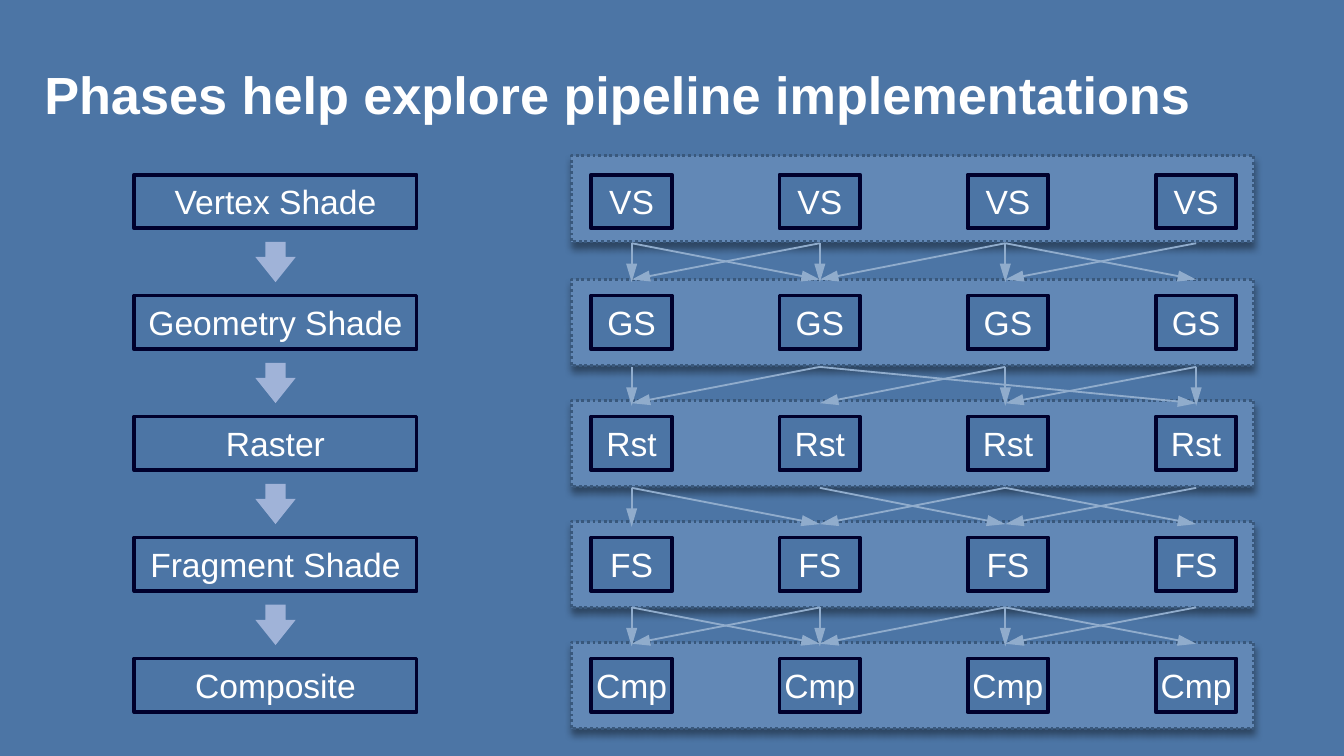
"""Build a slide on pipeline phases and their parallel implementation."""
import pptx
import pptx.dml.color
import pptx.enum.dml
import pptx.enum.shapes
import pptx.enum.text
import pptx.oxml
import pptx.oxml.ns
import pptx.util

Inches = pptx.util.Inches
RGBColor = pptx.dml.color.RGBColor
SHAPES = pptx.enum.shapes.MSO_SHAPE
ALIGN = pptx.enum.text.PP_ALIGN
MIDDLE = pptx.enum.text.MSO_ANCHOR.MIDDLE

BLUE = RGBColor(0x4C, 0x75, 0xA5)
NAVY = RGBColor(0x00, 0x00, 0x2C)
WHITE = RGBColor(0xFF, 0xFF, 0xFF)
ARROW = RGBColor(0xA0, 0xB3, 0xD8)
BAND = RGBColor(0x62, 0x88, 0xB6)
BAND_EDGE = RGBColor(0x39, 0x58, 0x7C)
LINK = RGBColor(0x90, 0xAC, 0xCC)

STAGES = [
    ("Vertex Shade", "VS"),
    ("Geometry Shade", "GS"),
    ("Raster", "Rst"),
    ("Fragment Shade", "FS"),
    ("Composite", "Cmp"),
]
ROW_TOP, ROW_STEP = 1.3, 0.9
LANE_LEFT, LANE_STEP, LANES = 4.4, 1.4, 4
BAND_TOPS = [1.16, 2.08, 2.98, 3.88, 4.78]
LINK_XS = [4.7, 6.1, 7.48, 8.9]
LINK_TOPS = [1.81, 2.73, 3.63, 4.52]
CROSSED = [(2, 1), (1, 1), (2, 3), (0, 1), (1, 0), (0, 0), (2, 2), (3, 2)]
LINKS = [
    CROSSED,
    [(2, 1), (1, 3), (3, 2), (1, 0), (0, 0), (2, 2), (3, 3)],
    [(2, 1), (1, 2), (2, 3), (0, 1), (0, 0), (3, 2)],
    CROSSED,
]
DRAWING = 'xmlns:a="http://schemas.openxmlformats.org/drawingml/2006/main"'
SHADOW = (
    f'<a:outerShdw {DRAWING} blurRad="50800" dist="38100" dir="5400000" rotWithShape="0">'
    '<a:srgbClr val="000000"><a:alpha val="40000"/></a:srgbClr></a:outerShdw>'
)


def write_text(frame, text, size, align, bold=False):
    """Put one formatted paragraph in a text frame."""
    frame.text = text
    frame.word_wrap = True
    frame.vertical_anchor = MIDDLE
    para = frame.paragraphs[0]
    para.alignment = align
    font = para.runs[0].font
    font.name, font.size, font.bold = "Arial", pptx.util.Pt(size), bold
    font.color.rgb = WHITE


def add_title(page, text):
    """Place the slide title."""
    title = page.shapes.title
    title.left, title.top = Inches(0.23), Inches(0.23)
    title.width, title.height = Inches(9.57), Inches(0.94)
    write_text(title.text_frame, text, 28, ALIGN.LEFT, bold=True)
    title.text_frame.auto_size = pptx.enum.text.MSO_AUTO_SIZE.NONE


def add_solid(page, kind, left, top, width, height, fill):
    """Add a plain filled shape without outline or shadow."""
    shape = page.shapes.add_shape(kind, Inches(left), Inches(top), Inches(width), Inches(height))
    shape.shadow.inherit = False
    shape.fill.solid()
    shape.fill.fore_color.rgb = fill
    shape.line.fill.background()
    return shape


def set_outline(shape, color, weight):
    """Give a shape or connector a solid line."""
    shape.line.color.rgb = color
    shape.line.width = pptx.util.Pt(weight)


def add_box(page, text, left, top, width, side_margin):
    """Add a labelled box with a dark outline."""
    box = add_solid(page, SHAPES.RECTANGLE, left, top, width, 0.4, BLUE)
    set_outline(box, NAVY, 2)
    frame = box.text_frame
    frame.margin_left = frame.margin_right = Inches(side_margin)
    write_text(frame, text, 18, ALIGN.CENTER)


def add_stage_arrow(page, top):
    """Add a block arrow pointing down to the next stage."""
    arrow = add_solid(page, SHAPES.RIGHT_ARROW, 1.9, top, 0.3, 0.3, ARROW)
    arrow.rotation = 90
    arrow.adjustments[1] = 0.624


def add_band(page, top):
    """Add the dotted, shadowed band behind one row of units."""
    band = add_solid(page, SHAPES.RECTANGLE, 4.25, top, 5.08, 0.64, BAND)
    set_outline(band, BAND_EDGE, 1.5)
    band.line.dash_style = pptx.enum.dml.MSO_LINE.ROUND_DOT
    effects = band._element.spPr.find(pptx.oxml.ns.qn("a:effectLst"))
    effects.append(pptx.oxml.parse_xml(SHADOW))


def add_link(page, start_x, end_x, top):
    """Add a thin arrow between the units of two rows."""
    drop = 0.29 if start_x == end_x else 0.27
    link = page.shapes.add_connector(
        pptx.enum.shapes.MSO_CONNECTOR.STRAIGHT,
        Inches(start_x), Inches(top), Inches(end_x), Inches(top + drop),
    )
    set_outline(link, LINK, 1)
    link.line._get_or_add_ln().append(
        pptx.oxml.parse_xml(f'<a:tailEnd {DRAWING} type="triangle" len="lg"/>'))
    link._element.spPr.append(pptx.oxml.parse_xml(f"<a:effectLst {DRAWING}/>"))


def main():
    """Build and save the deck."""
    deck = pptx.Presentation()
    deck.slide_width = Inches(10)
    deck.slide_height = deck.slide_width * 9 // 16
    page = deck.slides.add_slide(deck.slide_layouts.get_by_name("Title Only"))
    page.background.fill.solid()
    page.background.fill.fore_color.rgb = BLUE
    add_title(page, "Phases help explore pipeline implementations")

    for row, (stage, unit) in enumerate(STAGES):
        top = ROW_TOP + row * ROW_STEP
        add_box(page, stage, 1, top, 2.1, 0.1)
        if row < len(STAGES) - 1:
            add_stage_arrow(page, top + 0.5)
        add_band(page, BAND_TOPS[row])
        for lane in range(LANES):
            add_box(page, unit, LANE_LEFT + lane * LANE_STEP, top, 0.6, 0)

    for top, pairs in zip(LINK_TOPS, LINKS):
        for start, end in pairs:
            add_link(page, LINK_XS[start], LINK_XS[end], top)
    deck.save("out.pptx")


if __name__ == "__main__":
    main()
